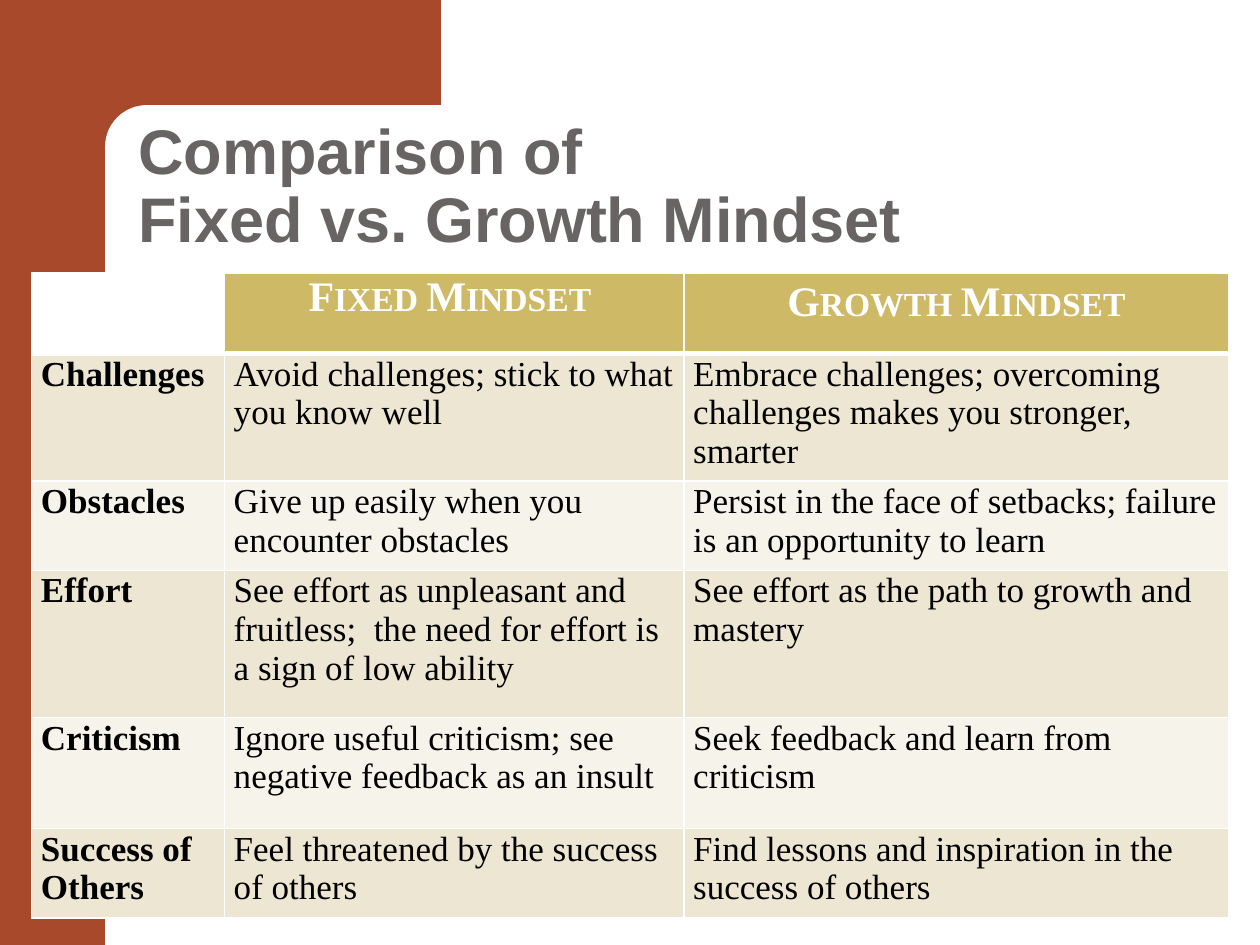
"""Build the slide that compares a fixed with a growth mindset."""
from dataclasses import dataclass

from lxml import etree
from pptx import Presentation
from pptx.dml.color import RGBColor
from pptx.enum import shapes, text
from pptx.oxml import ns
from pptx.util import Pt

TITLE = ["Comparison of ", "Fixed vs. Growth Mindset"]
HEADINGS = ["", "Fixed Mindset ", "Growth Mindset"]
TOPICS = [
    ("Challenges", "Avoid challenges; stick to what you know well",
     "Embrace challenges; overcoming challenges makes you stronger, smarter"),
    ("Obstacles", "Give up easily when you encounter obstacles",
     "Persist in the face of setbacks; failure is an opportunity to learn"),
    ("Effort", "See effort as unpleasant and fruitless;  the need for effort is a sign of low ability",
     "See effort as the path to growth and mastery"),
    ("Criticism", "Ignore useful criticism; see negative feedback as an insult",
     "Seek feedback and learn from criticism"),
    ("Success of Others", "Feel threatened by the success of others",
     "Find lessons and inspiration in the success of others"),
]
COLUMN_WIDTHS = [110.2, 262.6, 311.6]
ROW_HEIGHTS = [46.1, 69.1, 51.1, 84.2, 63.4, 51.1]
FRAME = [
    (shapes.MSO_SHAPE.RECTANGLE, (0, 0, 60, 540), "rust"),
    (shapes.MSO_SHAPE.RECTANGLE, (54, 0, 198, 84), "rust"),
    (shapes.MSO_SHAPE.ROUNDED_RECTANGLE, (60, 60, 402, 48), "white"),
]


@dataclass(frozen=True)
class Theme:
    """Colours, fonts and type sizes of the slide."""
    rust: str = "A8492B"
    white: str = "FFFFFF"
    grey: str = "696464"
    black: str = "000000"
    gold: str = "CEB966"
    bands: tuple = ("EDE6D3", "F6F3EA")
    title_font: str = "Arial"
    table_font: str = "Times New Roman"
    title_size: int = 36
    heading_size: int = 24
    body_size: int = 20


THEME = Theme()


def paint(fill, colour):
    """Fill with one solid colour."""
    fill.solid()
    fill.fore_color.rgb = RGBColor.from_string(colour)


def add_run(paragraph, words, font, size, colour, bold):
    """Append a styled run and return it."""
    run = paragraph.add_run()
    run.text = words
    run.font.name = font
    run.font.size = Pt(size)
    run.font.bold = bold
    run.font.color.rgb = RGBColor.from_string(colour)
    return run


def add_frame(slide):
    """Draw the corner frame."""
    for kind, box, colour in FRAME:
        part = slide.shapes.add_shape(kind, *map(Pt, box))
        part.shadow.inherit = False
        paint(part.fill, getattr(THEME, colour))
        part.line.fill.background()
        if kind == shapes.MSO_SHAPE.ROUNDED_RECTANGLE:
            part.adjustments[0] = 0.5


def add_title(slide):
    """Write the two title lines."""
    frame = slide.shapes.add_textbox(Pt(72), Pt(60), Pt(630), Pt(90)).text_frame
    frame.word_wrap = True
    frame.vertical_anchor = text.MSO_ANCHOR.BOTTOM
    heading = frame.paragraphs[0]
    heading.line_spacing = 0.9
    for index, line in enumerate(TITLE):
        if index:
            heading.add_line_break()
        add_run(heading, line, THEME.title_font, THEME.title_size, THEME.grey, True)


def add_borders(cell, top, bottom):
    """Put white rules of the given widths round a cell."""
    properties = cell._tc.get_or_add_tcPr()
    for index, (side, width) in enumerate([("L", 1), ("R", 1), ("T", top), ("B", bottom)]):
        rule = etree.Element(ns.qn(f"a:ln{side}"), w=str(Pt(width)))
        fill = etree.SubElement(rule, ns.qn("a:solidFill"))
        etree.SubElement(fill, ns.qn("a:srgbClr"), val=THEME.white)
        properties.insert(index, rule)


def fill_cell(cell, words, row, column):
    """Style one cell by its place in the table and write its words."""
    header = row == 0
    if header:
        colour = THEME.gold if words else THEME.white
    else:
        colour = THEME.bands[(row - 1) % 2]
    paint(cell.fill, colour)
    add_borders(cell, top=3 if row == 1 else 1, bottom=3 if header else 1)
    if not words:
        return
    if (row, column) != (0, 2):
        cell.margin_left = cell.margin_right = Pt(5.4)
        cell.margin_top, cell.margin_bottom = Pt(0.7), Pt(0)
    paragraph = cell.text_frame.paragraphs[0]
    paragraph.space_before = paragraph.space_after = Pt(3)
    paragraph.alignment = text.PP_ALIGN.CENTER if header else text.PP_ALIGN.LEFT
    run = add_run(paragraph, words, THEME.table_font,
                  THEME.heading_size if header else THEME.body_size,
                  THEME.white if header else THEME.black, header or column == 0)
    if header:
        run.font._element.set("cap", "small")


def add_comparison(slide):
    """Build the comparison table."""
    rows = [HEADINGS, *TOPICS]
    table = slide.shapes.add_table(len(rows), len(HEADINGS), Pt(18), Pt(156),
                                   Pt(sum(COLUMN_WIDTHS)), Pt(sum(ROW_HEIGHTS))).table
    for column, width in zip(table.columns, COLUMN_WIDTHS):
        column.width = Pt(width)
    for row, height in zip(table.rows, ROW_HEIGHTS):
        row.height = Pt(height)
    for row, entries in enumerate(rows):
        for column, words in enumerate(entries):
            fill_cell(table.cell(row, column), words, row, column)


def main():
    """Assemble and save the slide."""
    deck = Presentation()
    deck.slide_width, deck.slide_height = Pt(720), Pt(540)
    slide = deck.slides.add_slide(deck.slide_layouts[6])
    add_frame(slide)
    add_title(slide)
    add_comparison(slide)
    deck.save("out.pptx")


if __name__ == "__main__":
    main()
